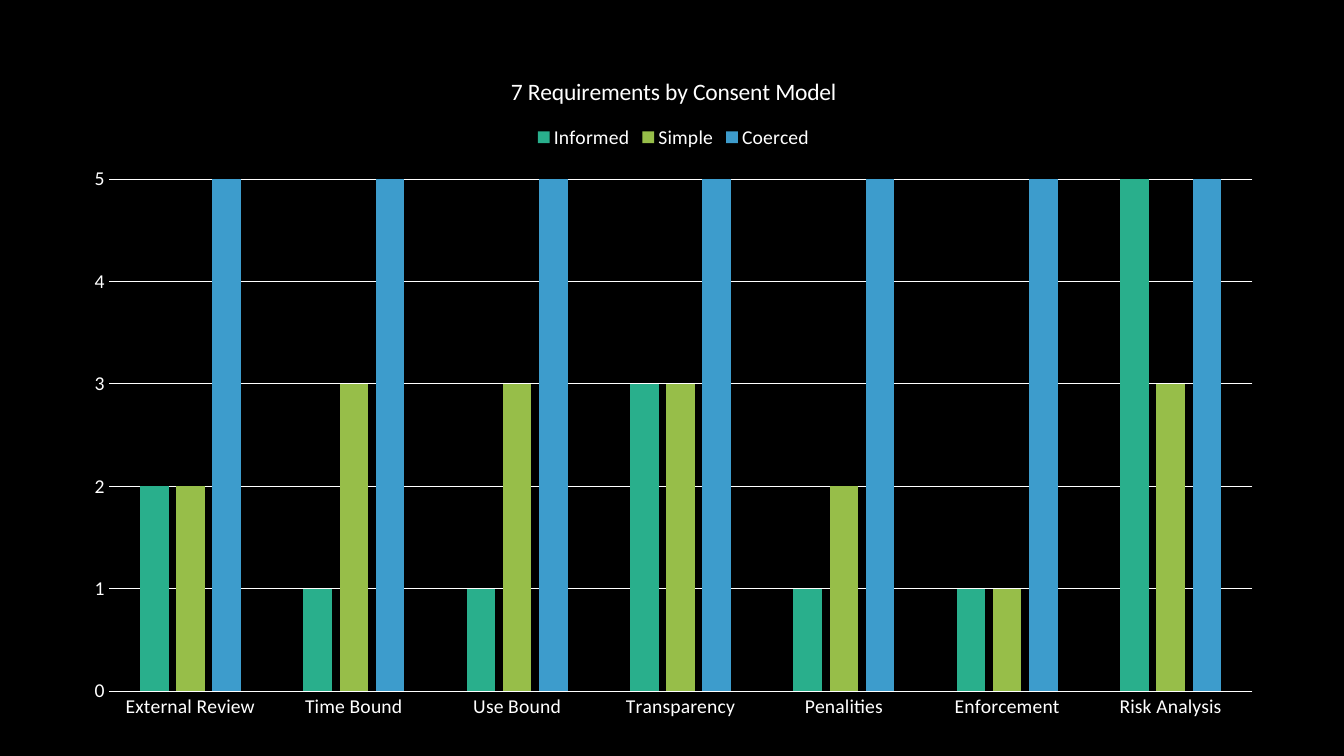
from pptx import Presentation
from pptx.chart.data import CategoryChartData
from pptx.dml.color import RGBColor
from pptx.enum.chart import XL_CHART_TYPE, XL_LEGEND_POSITION, XL_TICK_MARK
from pptx.util import Inches, Pt

COLORS = {
    "background": "000000",
    "text": "FFFFFF",
    "Informed": "29AF8C",
    "Simple": "97BE49",
    "Coerced": "3D9CCC",
}
REQUIREMENTS = [
    "External Review", "Time Bound", "Use Bound", "Transparency",
    "Penalities", "Enforcement", "Risk Analysis",
]
CONSENT_MODELS = {
    "Informed": [2, 1, 1, 3, 1, 1, 5],
    "Simple": [2, 3, 3, 3, 2, 1, 3],
    "Coerced": [5] * len(REQUIREMENTS),
}


class SlideBuilder:
    font_name = "Calibri"
    text_size = 14
    title_size = 16.8
    line_width = 0.75

    def __init__(self, presentation):
        self.slide = presentation.slides.add_slide(presentation.slide_layouts[6])
        self.fill(self.slide.background.fill, "background")

    def fill(self, fill, color):
        fill.solid()
        fill.fore_color.rgb = RGBColor.from_string(COLORS[color])

    def style_font(self, font, size):
        font.name = self.font_name
        font.size = Pt(size)
        font.bold = False
        font.color.rgb = RGBColor.from_string(COLORS["text"])

    def style_line(self, line):
        line.width = Pt(self.line_width)
        self.fill(line.fill, "text")

    def style_axis(self, axis):
        axis.major_tick_mark = XL_TICK_MARK.NONE
        axis.minor_tick_mark = XL_TICK_MARK.NONE
        self.style_font(axis.tick_labels.font, self.text_size)

    def add_column_chart(self, title, categories, values_by_series, left, top, width, height):
        data = CategoryChartData(number_format="General")
        data.categories = categories
        for name, values in values_by_series.items():
            data.add_series(name, values)
        chart = self.slide.shapes.add_chart(
            XL_CHART_TYPE.COLUMN_CLUSTERED,
            Inches(left), Inches(top), Inches(width), Inches(height), data,
        ).chart
        self.style_font(chart.font, self.text_size)

        chart.has_title = True
        chart.chart_title.include_in_layout = False
        chart.chart_title.text_frame.text = title
        self.style_font(chart.chart_title.text_frame.paragraphs[0].font, self.title_size)

        chart.has_legend = True
        chart.legend.position = XL_LEGEND_POSITION.TOP
        chart.legend.include_in_layout = False
        self.style_font(chart.legend.font, self.text_size)

        self.style_axis(chart.category_axis)
        self.style_line(chart.category_axis.format.line)
        value_axis = chart.value_axis
        self.style_axis(value_axis)
        value_axis.format.line.fill.background()
        value_axis.minimum_scale = 0
        value_axis.maximum_scale = 5
        value_axis.major_unit = 1
        self.style_line(value_axis.major_gridlines.format.line)

        plot = chart.plots[0]
        plot.gap_width = 219
        plot.overlap = -27
        plot.vary_by_categories = False
        for series in plot.series:
            self.fill(series.format.fill, series.name)


def main():
    presentation = Presentation()
    presentation.slide_width = Inches(13.33)
    presentation.slide_height = Inches(7.5)
    builder = SlideBuilder(presentation)
    builder.add_column_chart(
        "7 Requirements by Consent Model", REQUIREMENTS, CONSENT_MODELS,
        0.7, 0.52, 11.96, 6.75,
    )
    presentation.save("out.pptx")


if __name__ == "__main__":
    main()
